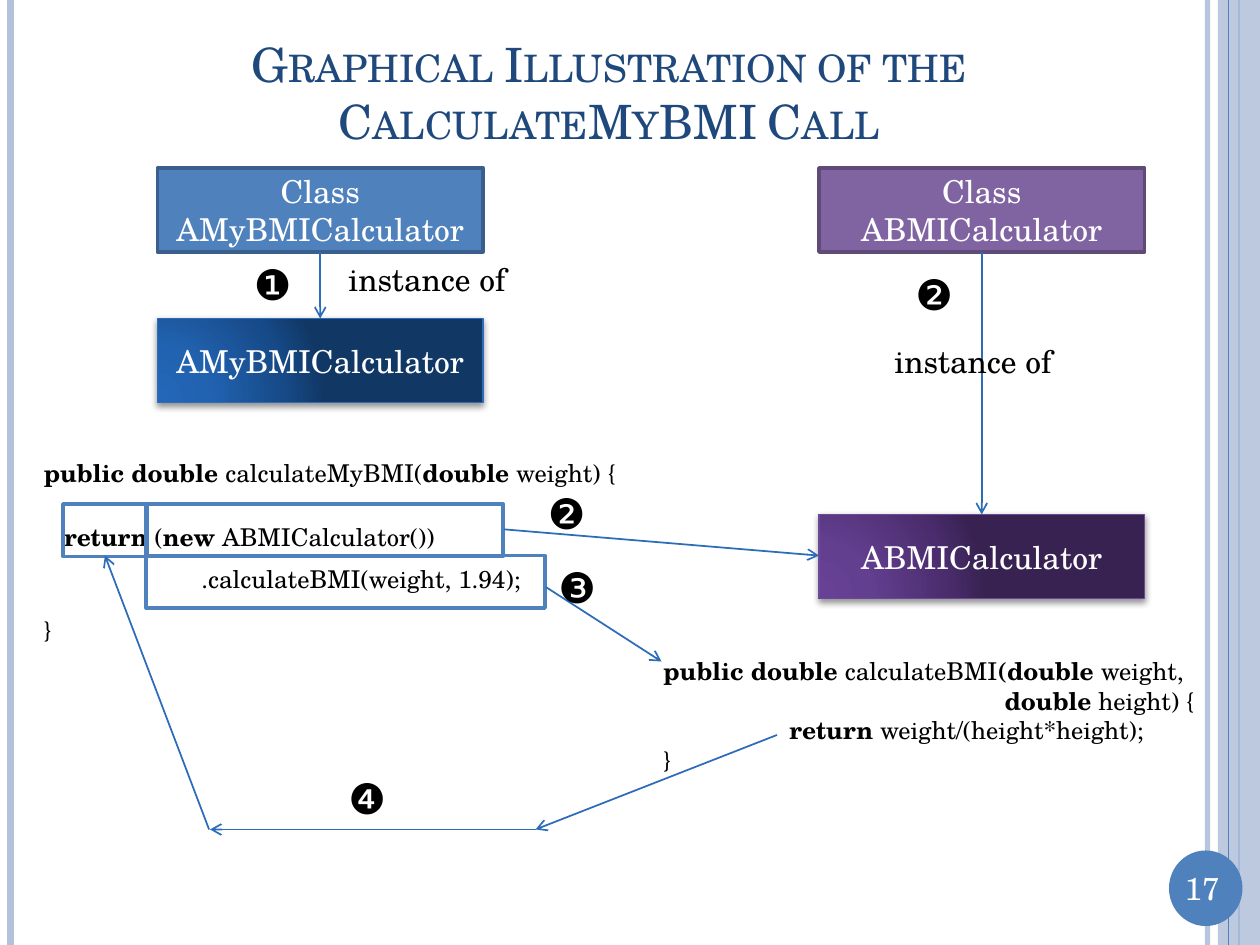
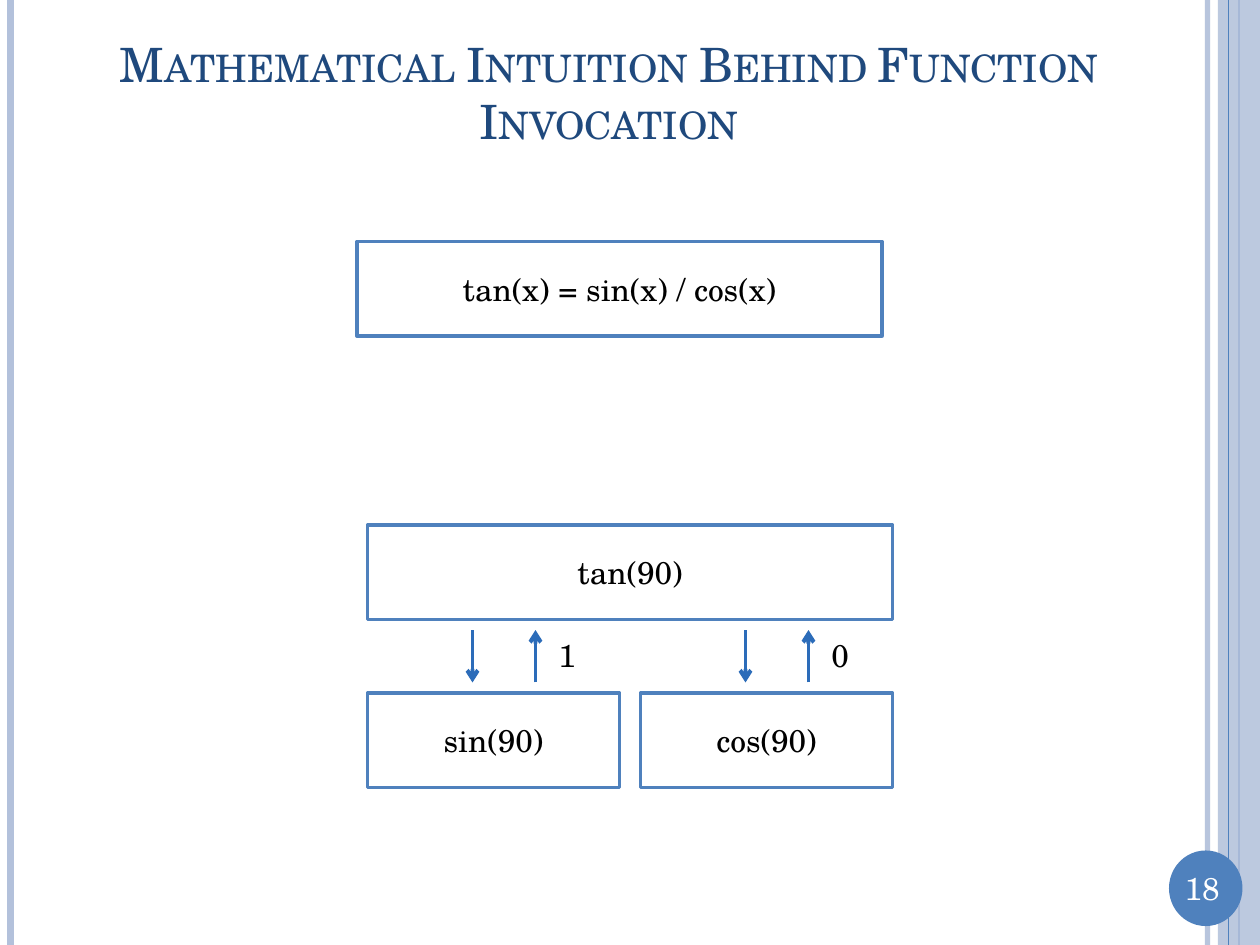
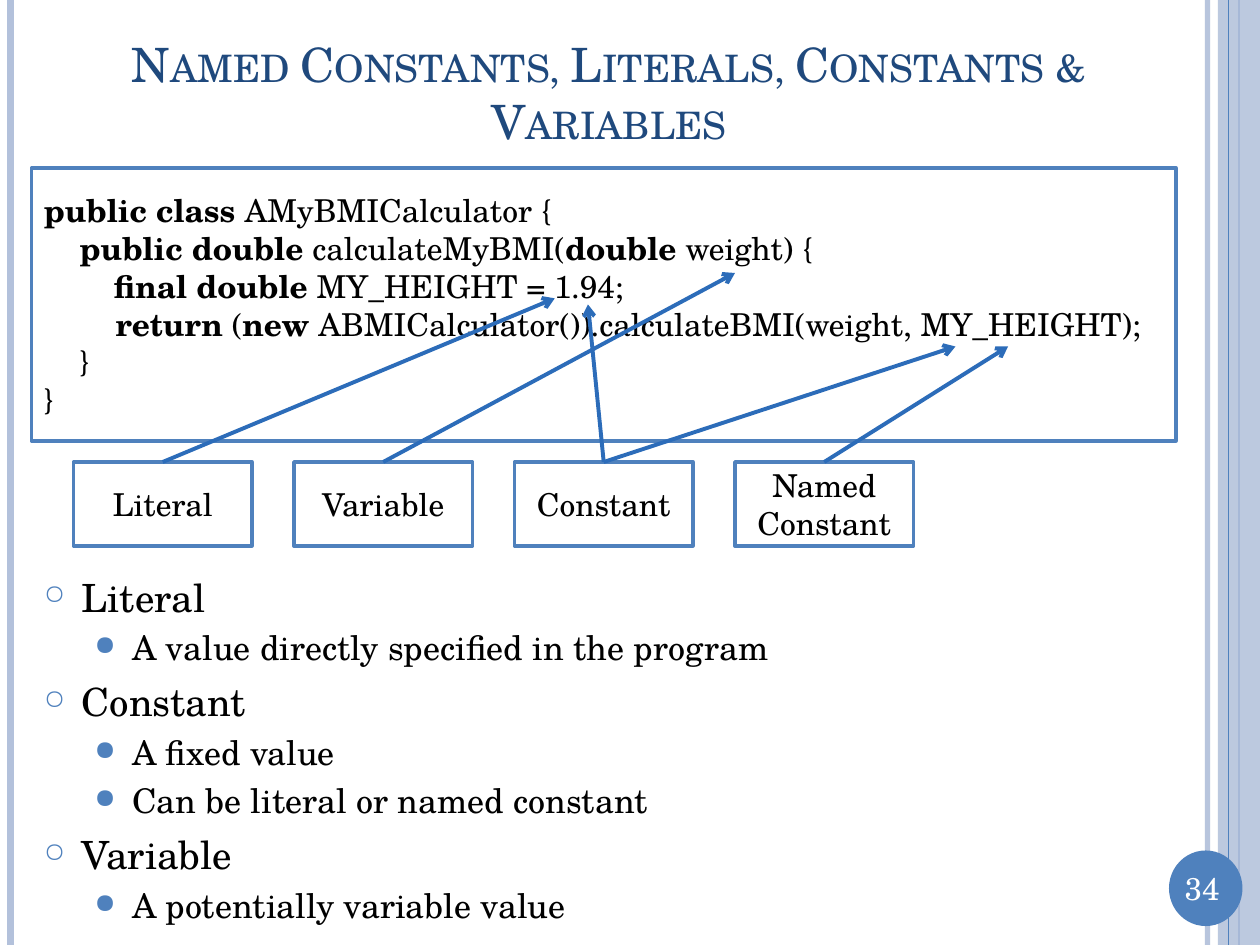
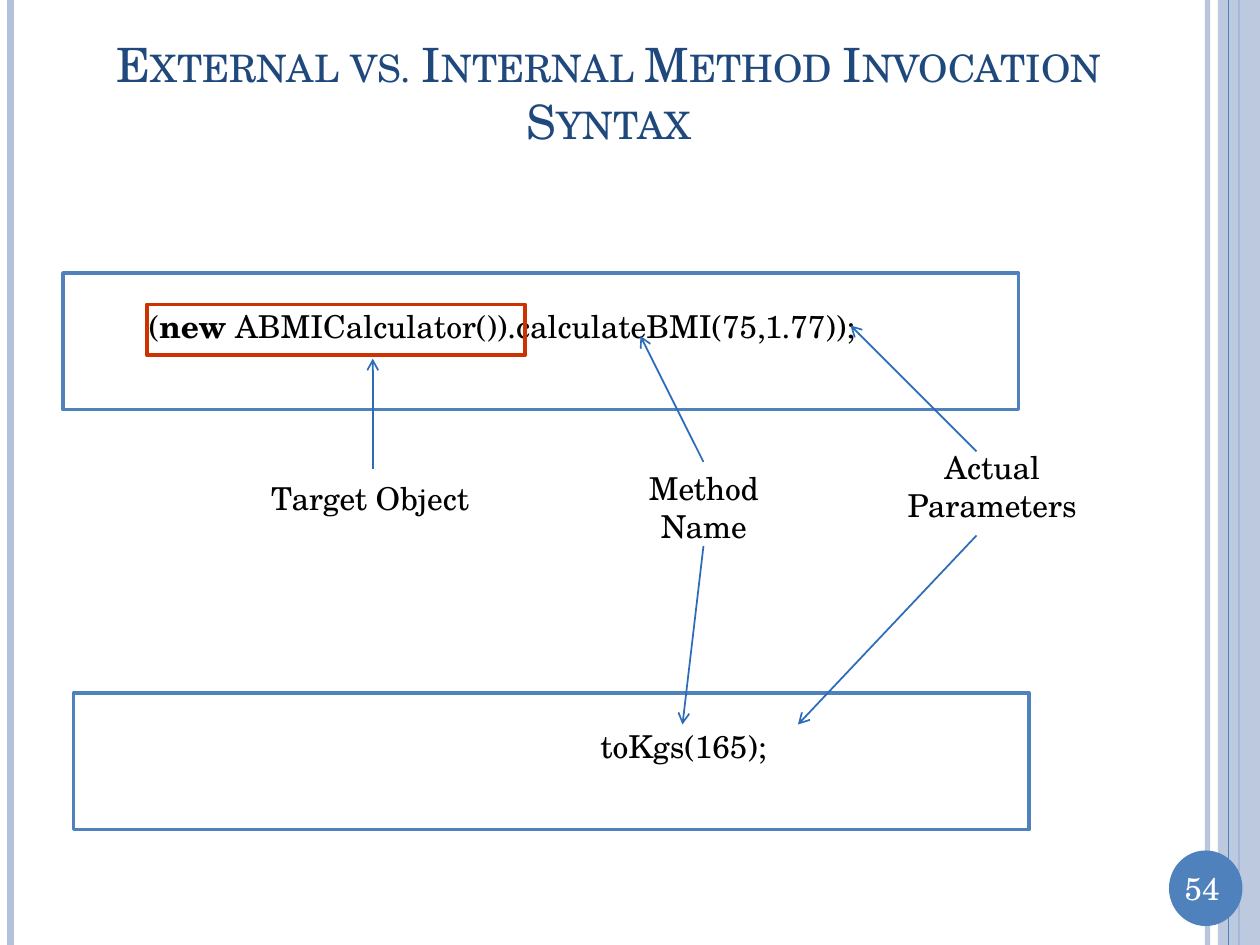
from lxml.etree import SubElement
from pptx import Presentation
from pptx.dml.color import RGBColor
from pptx.enum.shapes import MSO_CONNECTOR, MSO_SHAPE
from pptx.enum.text import MSO_ANCHOR, MSO_AUTO_SIZE, PP_ALIGN
from pptx.oxml import parse_xml
from pptx.oxml.ns import nsdecls, qn
from pptx.util import Pt

FONT = "TeX Gyre Schola"
HUES = {
    "ink": "000000", "white": "FFFFFF", "title": "1F497D", "band": "B3C1DB",
    "blue": "4F81BD", "navy": "3A5F8C", "arrow": "2C6CB9",
    "plum": "8064A2", "dusk": "5F4A78", "grape": "6C4898", "red": "CC3300",
}
STOPS = (0, 30, 75, 100)
GLOWS = {
    "blue": ("2367B8", "2263B1", "164A88", "113765"),
    "plum": ("674195", "633F90", "4B2D6E", "372251"),
}
LEFT, MID = PP_ALIGN.LEFT, PP_ALIGN.CENTER
TOP, HALF = MSO_ANCHOR.TOP, MSO_ANCHOR.MIDDLE
GROW, FIXED = MSO_AUTO_SIZE.SHAPE_TO_FIT_TEXT, MSO_AUTO_SIZE.NONE


def put(thing, **looks):
    for name, value in looks.items():
        setattr(thing, name, value)


def hue(name):
    return RGBColor.from_string(HUES[name])


def points(*spans):
    return [Pt(span) for span in spans]


def fade(shape, share):
    tint = shape.element.spPr.find(".//" + qn("a:srgbClr"))
    SubElement(tint, qn("a:alpha"), val=str(share * 1000))


def indent(para, left, hang=0):
    props = para._p.get_or_add_pPr()
    for name, span in {"marL": left, "indent": hang}.items():
        props.set(name, str(Pt(span)))
    return props


def write(para, words, size, ink, align=LEFT):
    para.alignment = align
    for turn, part in enumerate(words.split("|")):
        if part:
            run = para.add_run()
            put(run, text=part)
            put(run.font, name=FONT, size=Pt(size), bold=turn % 2 == 1)
            run.font.color.rgb = hue(ink)


def fill_text(frame, lines, size=18, ink="ink", align=LEFT, **looks):
    put(frame, **looks)
    for spot, line in enumerate(lines):
        para = frame.add_paragraph() if spot else frame.paragraphs[0]
        left, words = line if isinstance(line, tuple) else (0, line)
        if left:
            indent(para, left)
        write(para, words, size, ink, align)


def note(slide, x, y, w, h, *lines, wrap=True, anchor=TOP, **looks):
    box = slide.shapes.add_textbox(*points(x, y, w, h))
    fill_text(box.text_frame, lines, word_wrap=wrap, auto_size=GROW,
              vertical_anchor=anchor, **looks)


def badge(slide, x, y, mark):
    note(slide, x, y, 36, 36, mark, size=24, wrap=False)


def block(slide, x, y, w, h, *lines, fill="white", edge="blue", width=2,
          kind=MSO_SHAPE.RECTANGLE, align=MID, **looks):
    shape = slide.shapes.add_shape(kind, *points(x, y, w, h))
    shape.shadow.inherit = False
    if fill:
        shape.fill.solid()
        shape.fill.fore_color.rgb = hue(fill)
    else:
        shape.fill.background()
    if edge:
        shape.line.color.rgb = hue(edge)
        shape.line.width = Pt(width)
    else:
        shape.line.fill.background()
    fill_text(shape.text_frame, lines, align=align, word_wrap=True,
              vertical_anchor=HALF, **looks)
    return shape


def line(slide, x1, y1, x2, y2, width=1, color="arrow", tip=True):
    link = slide.shapes.add_connector(
        MSO_CONNECTOR.STRAIGHT, *points(x1, y1, x2, y2))
    link.line.color.rgb = hue(color)
    link.line.width = Pt(width)
    props = link.element.spPr
    if tip:
        SubElement(props.find(qn("a:ln")), qn("a:tailEnd"), type="arrow")
    SubElement(props, qn("a:effectLst"))
    return link


def links(slide, x, y, ends, width=1):
    for x1, y1, x2, y2 in ends:
        line(slide, x + x1, y + y1, x + x2, y + y2, width)


def glow(shape, tone):
    stops = "".join(
        f'<a:gs pos="{stop * 1000}"><a:srgbClr val="{code}"/></a:gs>'
        for stop, code in zip(STOPS, GLOWS[tone]))
    props = shape.element.spPr
    props.replace(props.find(qn("a:solidFill")), parse_xml(
        f'<a:gradFill {nsdecls("a")} rotWithShape="1"><a:gsLst>{stops}</a:gsLst>'
        '<a:path path="circle"><a:fillToRect l="5000" t="100000" r="120000"'
        ' b="10000"/></a:path></a:gradFill>'))
    cast = SubElement(
        props.find(qn("a:effectLst")), qn("a:outerShdw"), blurRad=str(Pt(4)),
        dist=str(Pt(1.6)), dir="5400000", rotWithShape="0")
    tint = SubElement(cast, qn("a:srgbClr"), val=HUES["ink"])
    SubElement(tint, qn("a:alpha"), val="42000")


def frame(layout, slide):
    for holder in list(layout.placeholders)[1:]:
        holder.element.getparent().remove(holder.element)

    def stripe(x, width, color):
        return line(slide, x, 0, x, 540, width, color, tip=False)

    parts = [stripe(690, 3, "band"), stripe(6, 4.5, "band"),
             stripe(708, 1.5, "blue"),
             block(slide, 696, 0, 24, 540, fill="band", edge=None),
             stripe(702, 0.75, "blue"),
             block(slide, 668, 486, 42, 43.2, fill="blue", edge=None,
                   kind=MSO_SHAPE.OVAL)]
    fade(parts[0], 93)
    fade(parts[3], 87)
    for part in parts:
        layout.shapes.element.append(part.element)


def head(slide, words, number):
    title = slide.shapes.title
    put(title, **dict(zip(("left", "top", "width", "height"),
                          points(36, 21.6, 624, 62.4))))
    fill_text(title.text_frame, [words], size=27, ink="title", align=MID,
              word_wrap=True, vertical_anchor=HALF, auto_size=FIXED)
    for run in title.text_frame.paragraphs[0].runs:
        run.font._element.set("cap", "small")
    note(slide, 666, 493, 42, 29, str(number), ink="white", align=MID)


def object_pair(slide, x, y, drop, name, tones, mark, mark_y, label):
    fill, edge, rim = tones
    w, h = 186, 48
    block(slide, x, y, w, h, f"Class {name}", fill=fill, edge=edge, ink="white")
    made = block(slide, x, y + drop, w, h, name, fill=fill, edge=rim, width=1,
                 ink="white")
    glow(made, fill)
    line(slide, x + w / 2, y + h, x + w / 2, y + drop)
    badge(slide, x + 48, y + mark_y, mark)
    note(slide, x + label[0], y + label[1], 105, 29, "instance of", wrap=False)


def caller(slide, x, y):
    for dx, dy, w, words in (
            (0, 0, 354, "|public double |calculateMyBMI(|double| weight) {"),
            (11.5, 37, 270, "|return| (|new |ABMICalculator())"),
            (18, 61, 270, (72, ".calculateBMI(weight, 1.94);")),
            (0, 90, 30, "}")):
        note(slide, x + dx, y + dy, w, 24.5, words, size=14)
    for dx, dy, w in ((18, 30, 48), (65.5, 30, 204), (65.5, 59.5, 228)):
        block(slide, x + dx, y + dy, w, 30, fill=None)
    links(slide, x, y, ((270, 44.5, 450, 59.5), (294, 77.5, 360, 120),
                        (426, 162, 288, 216), (288, 216, 102, 216),
                        (101.5, 216, 42, 59.5)))
    for dx, dy, mark in ((288, 17, "❷"), (294, 59.5, "❸"), (174, 180, "❹")):
        badge(slide, x + dx, y + dy, mark)


def call_slide(slide):
    object_pair(slide, 90, 96, 86, "AMyBMICalculator",
                ("blue", "navy", "arrow"), "❶", 48, (102, 49))
    object_pair(slide, 468, 96, 198, "ABMICalculator",
                ("plum", "dusk", "grape"), "❷", 54, (36, 96))
    caller(slide, 18, 258)
    note(slide, 372, 371.5, 336, 75,
         "|public double |calculateBMI|(double| weight,",
         (195, "|double| height) {"),
         (72, "|return| weight/(height*height);"), "}", size=14)


def tree(slide, x, y, root, leaves):
    w, h, gap = 300, 54, 12
    block(slide, x, y, w, h, root)
    leaf_w = (w - gap) / 2
    for spot, (leaf, value) in enumerate(leaves):
        left = x + spot * (leaf_w + gap)
        block(slide, left, y + 96, leaf_w, h, leaf)
        links(slide, left, y, ((60, 60, 60, 90), (96, 90, 96, 60)), 2.25)
        note(slide, left + 102, y + 60, 24, 29, value)


def math_slide(slide):
    block(slide, 204, 138, 300, 54, "tan(x) = sin(x) / cos(x)")
    tree(slide, 210, 300, "tan(90)", (("sin(90)", "1"), ("cos(90)", "0")))


def tags(slide, x, y):
    w, step = 102, 126
    for spot, (name, ends) in enumerate((
            ("Literal", ((275, -93.5),)),
            ("Variable", ((378, -108),)),
            ("Constant", ((504, -66), (294, -90))),
            ("Named Constant", ((534, -66),)))):
        left = spot * step
        block(slide, x + left, y, w, 48, name)
        links(slide, x, y, [(left + w / 2, 0, *end) for end in ends], 2.25)


def bullets(slide, x, y, w, h, items):
    styles = ((22.2, 6, 21.6, "○", 70), (19.4, 4, 50.4, "●", 80))
    body = slide.shapes.add_textbox(*points(x, y, w, h)).text_frame
    put(body, word_wrap=True, auto_size=FIXED)
    for spot, (level, words) in enumerate(items):
        size, space, left, mark, share = styles[level]
        para = body.add_paragraph() if spot else body.paragraphs[0]
        put(para, level=level, space_before=Pt(space))
        props = indent(para, left, -21.6)
        tint = SubElement(props, qn("a:buClr"))
        SubElement(tint, qn("a:srgbClr"), val=HUES["blue"])
        SubElement(props, qn("a:buSzPct"), val=str(share * 1000))
        SubElement(props, qn("a:buChar"), char=mark)
        write(para, words, size, "ink")


def terms_slide(slide):
    block(slide, 18, 96, 654, 156,
          "|public class |AMyBMICalculator {",
          (20.5, "|public double |calculateMyBMI(|double| weight) {"),
          (40, "|final double| MY_HEIGHT = 1.94;"),
          (41, "|return| (|new |ABMICalculator()).calculateBMI(weight, MY_HEIGHT);"),
          (20.5, "}"), "}", align=LEFT)
    bullets(slide, 18, 324, 642, 204, (
        (0, "Literal"), (1, "A value directly specified in the program"),
        (0, "Constant"), (1, "A fixed value"),
        (1, "Can be literal or named constant"),
        (0, "Variable"), (1, "A potentially variable value")))
    tags(slide, 42, 264)


def panel(slide, x, y, dx, w, words):
    block(slide, x, y, 546, 78)
    note(slide, x + dx, y + 12, w, 36, words, anchor=HALF)


def syntax_slide(slide):
    panel(slide, 36, 156, 42, 495, "(|new| ABMICalculator()).calculateBMI(75,1.77));")
    panel(slide, 42, 396, 294, 164, "toKgs(165);")
    block(slide, 84, 174, 216, 29, fill=None, edge="red", width=2.25)
    for x, y, w, h, words in ((492, 252, 150, 51, "Actual Parameters"),
                              (354, 264, 96.5, 51, "Method Name"),
                              (108, 270, 207, 29, "Target Object")):
        note(slide, x, y, w, h, words, align=MID, anchor=HALF)
    links(slide, 0, 0, ((558, 258, 486, 186), (402, 264, 366, 192),
                        (213, 268, 213, 205), (402, 312, 390, 414),
                        (558, 306, 456, 414)))


def main():
    deck = Presentation()
    put(deck, slide_width=Pt(720), slide_height=Pt(540))
    layout = deck.slide_layouts[5]
    pages = (
        (17, "Graphical Illustration of the CalculateMyBMI Call", call_slide),
        (18, "Mathematical Intuition Behind Function Invocation", math_slide),
        (34, "Named Constants, Literals, Constants & Variables", terms_slide),
        (54, "External vs. Internal Method Invocation Syntax", syntax_slide),
    )
    for spot, (number, words, draw) in enumerate(pages):
        slide = deck.slides.add_slide(layout)
        if spot == 0:
            frame(layout, slide)
        head(slide, words, number)
        draw(slide)
    deck.save("out.pptx")


if __name__ == "__main__":
    main()
